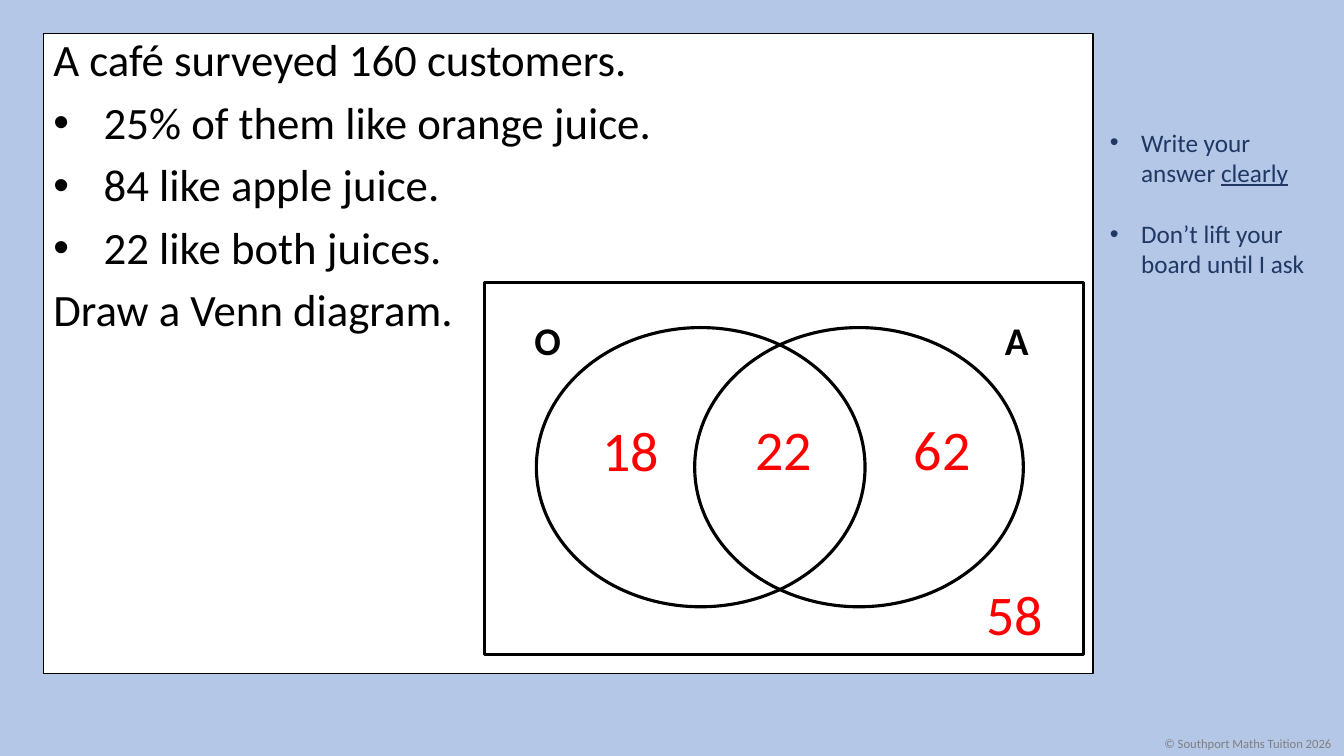
import pptx
import pptx.dml.color
import pptx.enum.shapes
import pptx.enum.text
import pptx.util
from pptx.util import Inches, Pt

COLOURS = {"background": "B4C7E7", "panel": "FFFFFF", "ink": "000000",
           "notes": "203864", "copyright": "808080", "answer": "FF0000"}
FONT = "Calibri"
SHAPES = pptx.enum.shapes.MSO_SHAPE
ALIGN = pptx.enum.text.PP_ALIGN


def rgb(name):
    return pptx.dml.color.RGBColor.from_string(COLOURS[name])


def add_outline(page, preset, box, weight, fill=None):
    shape = page.shapes.add_shape(preset, *map(Inches, box))
    shape.shadow.inherit = False
    if fill:
        shape.fill.solid()
        shape.fill.fore_color.rgb = rgb(fill)
    else:
        shape.fill.background()
    shape.line.color.rgb = rgb("ink")
    shape.line.width = Pt(weight)


def add_frame(page, box, wrap=True):
    frame = page.shapes.add_textbox(*map(Inches, box)).text_frame
    frame.word_wrap = wrap
    return frame


def add_span(para, text, size, colour, bold=False, underline=False):
    span = para.add_run()
    span.text = text
    span.font.name = FONT
    span.font.size = Pt(size)
    span.font.color.rgb = rgb(colour)
    span.font.bold = bold
    span.font.underline = underline


def next_para(frame, index):
    return frame.add_paragraph() if index else frame.paragraphs[0]


def add_bullet(para, indent):
    """Give the paragraph a round bullet with a hanging indent in inches."""
    properties = para._p.get_or_add_pPr()
    properties.set("marL", str(Inches(indent)))
    properties.set("indent", str(-Inches(indent)))
    namespace = pptx.oxml.ns.qn
    font = properties.makeelement(namespace("a:buFont"), {"typeface": "Arial"})
    mark = properties.makeelement(namespace("a:buChar"), {"char": "•"})
    properties.extend([font, mark])


def add_label(page, text, box, size, colour, align=ALIGN.CENTER, bold=False):
    para = add_frame(page, box, wrap=False).paragraphs[0]
    para.alignment = align
    add_span(para, text, size, colour, bold)


def add_question(page, box):
    add_outline(page, SHAPES.RECTANGLE, box, 1, "panel")
    frame = add_frame(page, box)
    lines = [("A café surveyed 160 customers.", False),
             ("25% of them like orange juice.", True),
             ("84 like apple juice.", True),
             ("22 like both juices.", True),
             ("Draw a Venn diagram.", False)]
    for index, (text, bulleted) in enumerate(lines):
        para = next_para(frame, index)
        para.line_spacing = 0.9
        if index:
            para.space_before = Pt(10)
        if bulleted:
            add_bullet(para, 0.5)
        add_span(para, text, 32, "ink")


def add_board_notes(page, box):
    frame = add_frame(page, box)
    notes = [[("Write your answer ", False), ("clearly", True)],
             [("Don’t lift your board until I ask", False)]]
    for index, spans in enumerate(notes):
        para = next_para(frame, index)
        if index:
            para.space_before = Pt(22)
        add_bullet(para, 0.31)
        for text, underline in spans:
            add_span(para, text, 18, "notes", underline=underline)


def add_venn(page, box):
    left, top, width, height = box
    for offset in (0.51, 2.08):
        add_outline(page, SHAPES.OVAL, (left + offset, top + 0.45, 3.26, 2.77), 2.25)
    add_outline(page, SHAPES.RECTANGLE, box, 2.25)
    for name, across, name_width in (("O", 0.38, 0.47), ("A", 5.05, 0.44)):
        add_label(page, name, (left + across, top + 0.29, name_width, 0.57),
                  28, "ink", ALIGN.RIGHT, bold=True)
    answers = [("18", 1.06, 1.27), ("22", 2.58, 1.26),
               ("62", 4.15, 1.26), ("58", 4.87, 2.9)]
    for number, across, down in answers:
        add_label(page, number, (left + across, top + down, 0.77, 0.77), 40, "answer")


def main():
    deck = pptx.Presentation()
    deck.slide_width, deck.slide_height = Inches(13.33), Inches(7.5)
    page = deck.slides.add_slide(deck.slide_layouts[6])
    page.background.fill.solid()
    page.background.fill.fore_color.rgb = rgb("background")
    add_question(page, (0.43, 0.33, 10.41, 6.35))
    add_board_notes(page, (10.91, 1.21, 2.32, 1.62))
    add_label(page, "© Southport Maths Tuition 2026", (11.45, 7.25, 1.88, 0.25),
              9, "copyright", ALIGN.LEFT)
    add_venn(page, (4.81, 2.8, 5.94, 3.69))
    deck.save("out.pptx")


if __name__ == "__main__":
    main()
